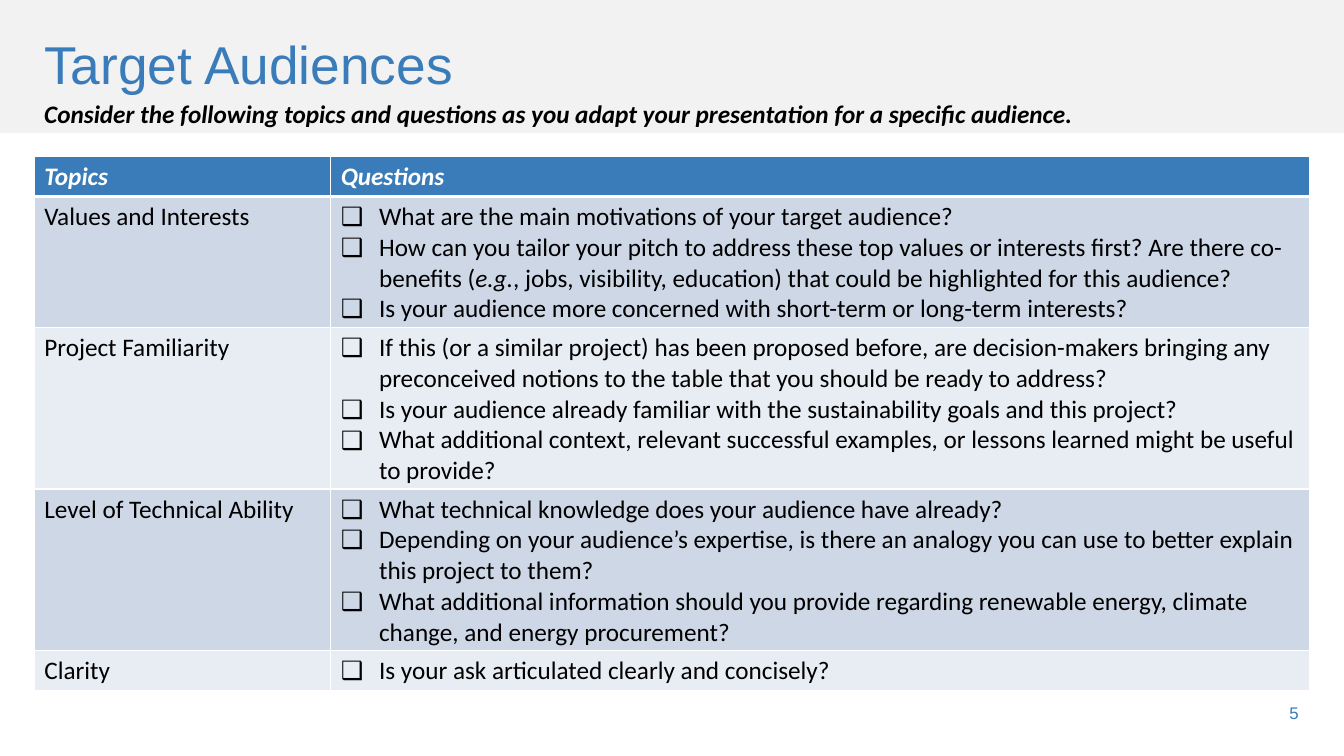
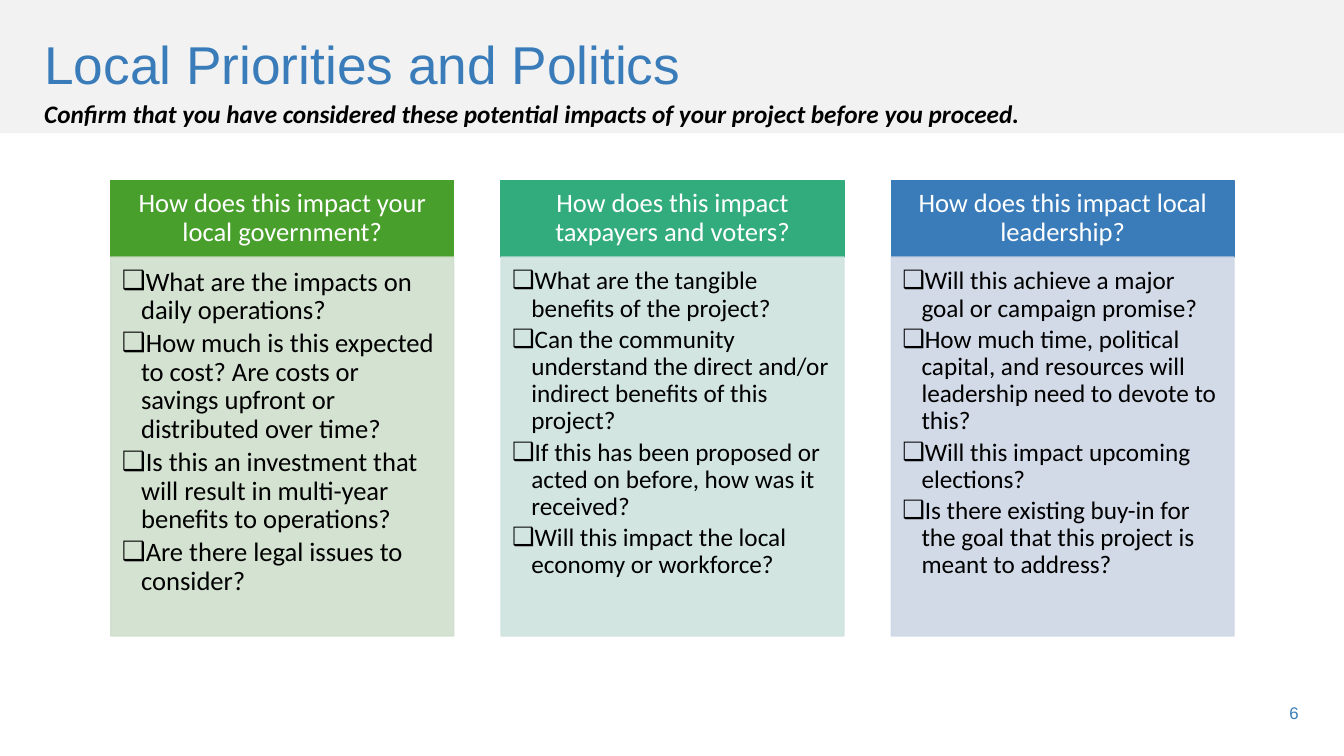
from lxml import etree
from pptx import Presentation
from pptx.dml.color import RGBColor
from pptx.enum import shapes, text
from pptx.oxml import ns
from pptx.util import Inches, Pt

# Shared style
COLORS = {
    "blue": "397CB9", "green": "499F2C", "teal": "32AC7D",
    "pale_blue": "CED7E6", "pale_green": "D0DFCD", "pale_teal": "CEE3DE",
    "row_light": "E8ECF3", "band": "F2F2F2", "white": "FFFFFF", "black": "000000",
}
LEFT, WIDTH = 0.34, 12.65
MIDDLE, TOP = text.MSO_ANCHOR.MIDDLE, text.MSO_ANCHOR.TOP

# Content; *stars* switch to italics
AUDIENCES = {
    "title": "Target Audiences",
    "subtitle": "Consider the following topics and questions as you adapt your "
                "presentation for a specific audience.",
    "number": "5",
}
HEADER = ("Topics", "Questions")
# Topic, number of text lines, questions
TOPICS = [
    ("Values and Interests", 4, [
        "What are the main motivations of your target audience?",
        "How can you tailor your pitch to address these top values or interests first? "
        "Are there co-benefits (*e.g.*, jobs, visibility, education) that could be "
        "highlighted for this audience?",
        "Is your audience more concerned with short-term or long-term interests?",
    ]),
    ("Project Familiarity", 5, [
        "If this (or a similar project) has been proposed before, are decision-makers "
        "bringing any preconceived notions to the table that you should be ready to address?",
        "Is your audience already familiar with the sustainability goals and this project?",
        "What additional context, relevant successful examples, or lessons learned "
        "might be useful to provide?",
    ]),
    ("Level of Technical Ability", 5, [
        "What technical knowledge does your audience have already?",
        "Depending on your audience’s expertise, is there an analogy you can use to "
        "better explain this project to them?",
        "What additional information should you provide regarding renewable energy, "
        "climate change, and energy procurement?",
    ]),
    ("Clarity", 1, ["Is your ask articulated clearly and concisely?"]),
]
PRIORITIES = {
    "title": "Local Priorities and Politics",
    "subtitle": "Confirm that you have considered these potential impacts of your "
                "project before you proceed.",
    "number": "6",
}
# Heading, heading colour, panel colour, question size, questions
IMPACTS = [
    ("How does this impact your local government?", "green", "pale_green", 19, [
        "What are the impacts on daily operations?",
        "How much is this expected to cost? Are costs or savings upfront or "
        "distributed over time?",
        "Is this an investment that will result in multi-year benefits to operations?",
        "Are there legal issues to consider?",
    ]),
    ("How does this impact taxpayers and voters?", "teal", "pale_teal", 18, [
        "What are the tangible benefits of the project?",
        "Can the community understand the direct and/or indirect benefits of this project?",
        "If this has been proposed or acted on before, how was it received?",
        "Will this impact the local economy or workforce?",
    ]),
    ("How does this impact local leadership?", "blue", "pale_blue", 18, [
        "Will this achieve a major goal or campaign promise?",
        "How much time, political capital, and resources will leadership need to "
        "devote to this?",
        "Will this impact upcoming elections?",
        "Is there existing buy-in for the goal that this project is meant to address?",
    ]),
]


def rgb(name):
    return RGBColor.from_string(COLORS[name])


def box(x, y, w, h):
    return [Inches(v) for v in (x, y, w, h)]


def sub(parent, tag, **attrs):
    return etree.SubElement(parent, ns.qn(tag), attrs)


def write(tf, lines, size=18, font="Calibri", color="black", bold=False, italic=False,
          align=text.PP_ALIGN.LEFT, anchor=TOP, spacing=None, after=0, hang=0, insets=None):
    """Fill a text frame, one paragraph a line; hang gives a checkbox bullet's indent."""
    tf.word_wrap = True
    tf.vertical_anchor = anchor
    if insets:
        tf.margin_left, tf.margin_top, tf.margin_right, tf.margin_bottom = box(*insets)
    for i, line in enumerate(lines):
        p = tf.add_paragraph() if i else tf.paragraphs[0]
        p.alignment, p.space_after = align, Pt(after)
        if spacing:
            p.line_spacing = spacing
        if hang:
            pPr = p._p.get_or_add_pPr()
            pPr.set("marL", str(Inches(hang)))
            pPr.set("indent", str(-Inches(hang)))
            sub(pPr, "a:buFont", typeface="Arial")
            sub(pPr, "a:buChar", char="❑")
        for j, part in enumerate(line.split("*")):
            r = p.add_run()
            r.text = part
            r.font.size, r.font.name, r.font.color.rgb = Pt(size), font, rgb(color)
            r.font.bold, r.font.italic = bold, italic or j % 2 == 1


def add_rect(s, place, color, opacity=None):
    sp = s.shapes.add_shape(shapes.MSO_SHAPE.RECTANGLE, *box(*place))
    sp.shadow.inherit = False
    sp.line.width = Pt(1)
    for fill in (sp.fill, sp.line.fill):
        fill.solid()
        fill.fore_color.rgb = rgb(color)
    if opacity:
        for clr in sp._element.spPr.iter(ns.qn("a:srgbClr")):
            sub(clr, "a:alpha", val=str(opacity * 1000))
    return sp


def add_band(s):
    """Put the title band on the layout, behind its placeholders."""
    band = add_rect(s, (0, 0, 13.33, 1.32), "band")
    band.line.fill.background()
    s.slide_layout.shapes._spTree.insert(2, band._element)


def add_slide(prs, layout, content):
    s = prs.slides.add_slide(layout)
    write(s.shapes.title.text_frame, [content["title"]], size=38, font="Arial",
          color="blue", anchor=MIDDLE, spacing=0.9)
    subtitle = s.shapes.add_textbox(*box(LEFT, 0.93, 11.41, 0.4))
    write(subtitle.text_frame, [content["subtitle"]], bold=True, italic=True)
    number = s.shapes.add_textbox(*box(9.98, 6.87, 3, 0.4))
    write(number.text_frame, [content["number"]], size=12, font="Arial", color="blue",
          align=text.PP_ALIGN.RIGHT, anchor=MIDDLE)
    return s


def style_cell(cell, color, bottom=1):
    tcPr = cell._tc.get_or_add_tcPr()
    for side, width in (("L", 1), ("R", 1), ("T", 1), ("B", bottom)):
        ln = sub(tcPr, "a:ln" + side, w=str(Pt(width)))
        sub(sub(ln, "a:solidFill"), "a:srgbClr", val=COLORS["white"])
    cell.fill.solid()
    cell.fill.fore_color.rgb = rgb(color)


def add_topics(s):
    line_counts = [1] + [lines for _, lines, _ in TOPICS]
    heights = [0.1 + 0.3 * n for n in line_counts]
    table = s.shapes.add_table(len(heights), 2,
                               *box(LEFT, 1.55, WIDTH, sum(heights))).table
    for column, width in zip(table.columns, (2.94, 9.71)):
        column.width = Inches(width)
    for row, height in zip(table.rows, heights):
        row.height = Inches(height)
    for c, label in enumerate(HEADER):
        cell = table.cell(0, c)
        style_cell(cell, "blue", bottom=3)
        write(cell.text_frame, [label], color="white", bold=True, italic=True)
    for i, (topic, _, questions) in enumerate(TOPICS, 1):
        for c, (lines, hang) in enumerate((([topic], 0), (questions, 0.38))):
            cell = table.cell(i, c)
            style_cell(cell, "pale_blue" if i % 2 else "row_light")
            write(cell.text_frame, lines, hang=hang)


def add_impacts(s):
    left, top, width, gap = 1.1, 1.79, 3.4, 0.47
    head_h, panel_h = 0.76, 3.76
    for i, (heading, color, pale, size, questions) in enumerate(IMPACTS):
        x = left + i * (width + gap)
        head = add_rect(s, (x, top, width, head_h), color)
        write(head.text_frame, [heading], size=19, color="white", spacing=0.9,
              align=text.PP_ALIGN.CENTER, anchor=MIDDLE, insets=(0.15, 0.08, 0.15, 0.08))
        panel = add_rect(s, (x, top + head_h, width, panel_h), pale, opacity=90)
        write(panel.text_frame, questions, size=size, spacing=0.9, after=2.8, hang=0.19,
              insets=(0.11, 0.11, 0.15, 0.17))


def main():
    prs = Presentation()
    prs.slide_width, prs.slide_height = Inches(13.33), Inches(7.5)
    layout = prs.slide_layouts[5]
    title = layout.placeholders[0]
    title.left, title.top, title.width, title.height = box(LEFT, 0.12, WIDTH, 1.09)

    # Topics and questions
    s = add_slide(prs, layout, AUDIENCES)
    add_band(s)
    add_topics(s)

    # Three impact columns
    s = add_slide(prs, layout, PRIORITIES)
    add_impacts(s)
    prs.save("out.pptx")


if __name__ == "__main__":
    main()
